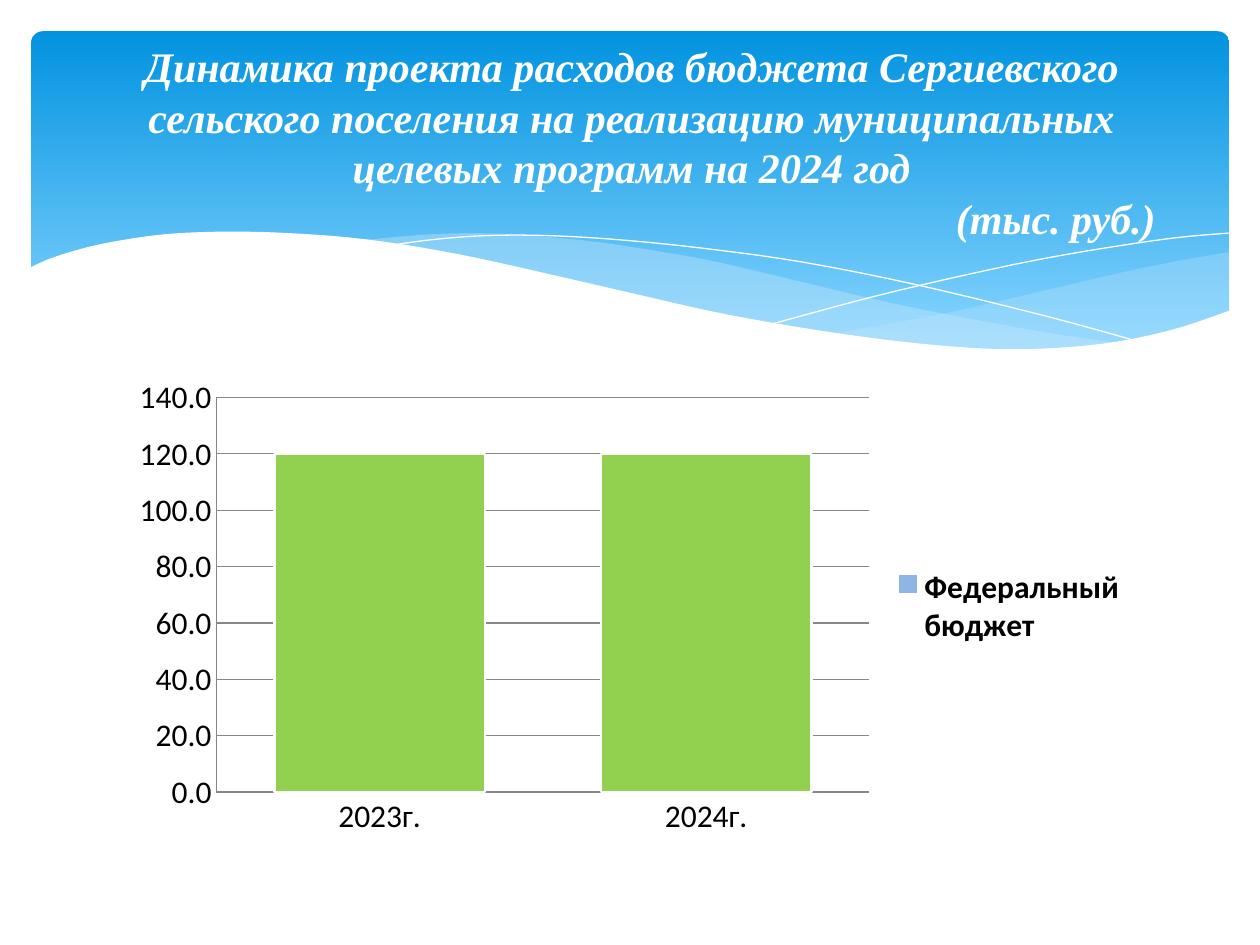
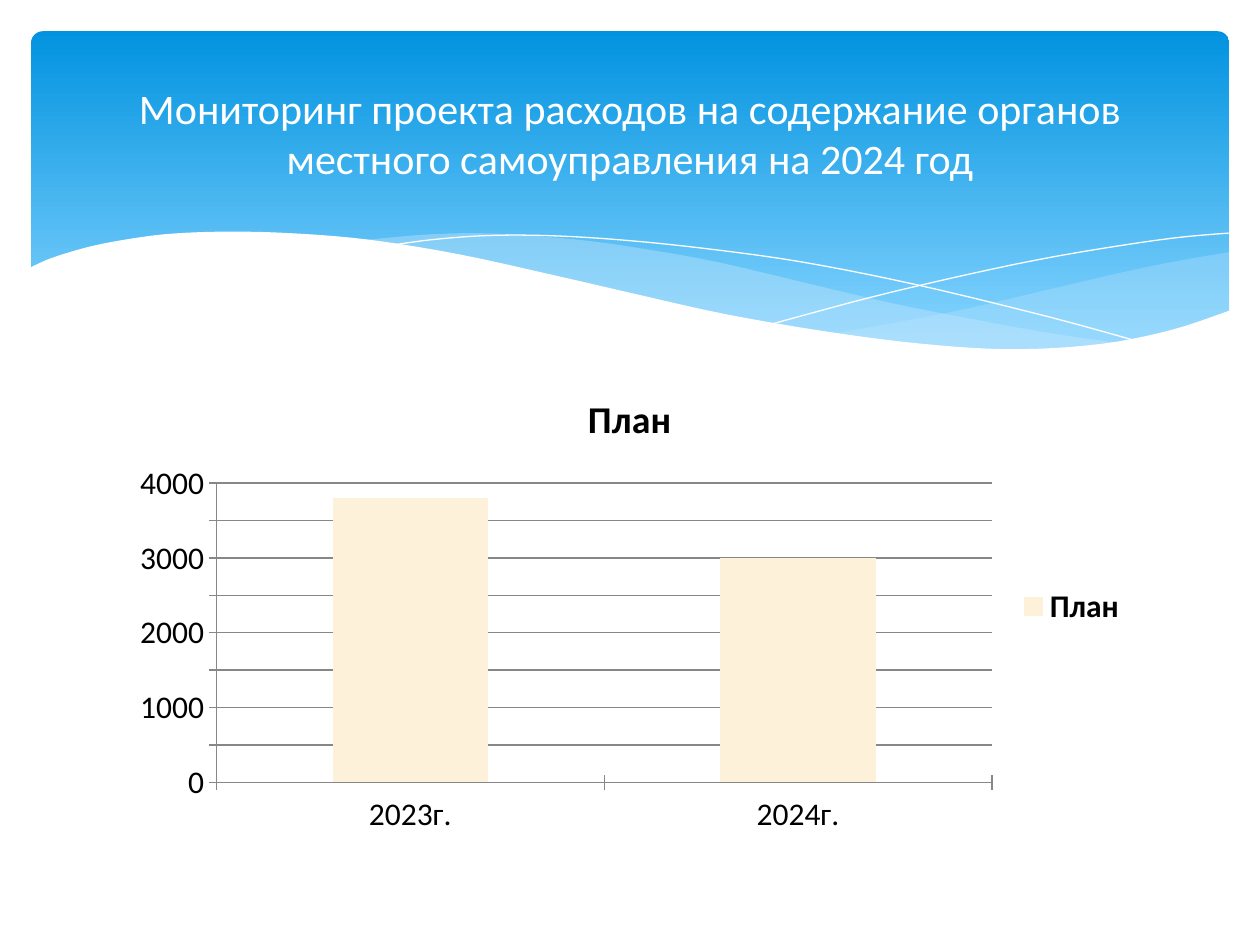
from dataclasses import dataclass

from lxml.etree import SubElement
from pptx import Presentation
from pptx.chart.data import CategoryChartData
from pptx.dml.color import RGBColor
from pptx.enum.chart import XL_CHART_TYPE, XL_LEGEND_POSITION, XL_TICK_MARK
from pptx.enum.shapes import MSO_SHAPE
from pptx.enum.text import MSO_ANCHOR, MSO_AUTO_SIZE, PP_ALIGN
from pptx.oxml import parse_xml
from pptx.oxml.ns import nsdecls, qn
from pptx.util import Cm, Pt


@dataclass(frozen=True)
class Theme:
    white: str = "FFFFFF"
    black: str = "000000"
    band_top: str = "0293E0"
    band_bottom: str = "83D3FE"
    veil: str = "C6E7FC"
    axis: str = "878787"
    green: str = "92D050"
    cyan: str = "00B0F0"
    soft_blue: str = "8FB5E5"
    cream: str = "FDF2D9"
    sans: str = "Calibri"
    serif: str = "Times New Roman"
    title_size: float = 24
    title_leading: float = 28.8
    chart_size: float = 18
    chart_title_size: float = 21.6


THEME = Theme()

# Content: titles are (text, alignment); charts hold (name, values, colour)
YEARS = ["2023г.", "2024г."]
SLIDES = [
    dict(
        title=[
            ("Динамика проекта расходов бюджета Сергиевского сельского поселения "
             "на реализацию муниципальных целевых программ на 2024 год", PP_ALIGN.CENTER),
            ("(тыс. руб.)", PP_ALIGN.RIGHT),
        ],
        title_box=(1.3, 0.91, 22.86, 3.89),
        title_format=dict(font=THEME.serif, bold=True, italic=True),
        chart=dict(
            kind=XL_CHART_TYPE.COLUMN_STACKED,
            series=[("Series 1", (120, 120), THEME.green),
                    ("Series 2", (0, 0), THEME.cyan),
                    ("Федеральный бюджет", (0, 0), THEME.soft_blue)],
            hidden_in_legend=[0, 1],
            gap=55, overlap=100, outline=THEME.white,
            top=140, step=20, number_format="#,##0.0",
            tick=XL_TICK_MARK.NONE,
            plot_area=(0.095, 0.06, 0.64, 0.83),
        ),
    ),
    dict(
        title=[("Мониторинг проекта расходов на содержание органов местного "
                "самоуправления на 2024 год", PP_ALIGN.CENTER)],
        title_box=(1.27, 0.94, 22.86, 3.48),
        title_format=dict(font=THEME.sans),
        chart=dict(
            kind=XL_CHART_TYPE.COLUMN_CLUSTERED,
            heading="План",
            series=[("План", (3800, 3000), THEME.cream)],
            gap=150, overlap=0,
            top=4000, step=500, number_format="General",
            tick=XL_TICK_MARK.CROSS,
            plot_area=(0.095, 0.24, 0.76, 0.63),
        ),
    ),
]
CHART_BOX = (2.41, 7.44, 20.57, 9.58)
BAND_BOX = (0.63, 0.63, 24.15, 6.86)
TITLE_INSET = 0.86

# Header waves, back to front: each outline is a chain of smooth curves in cm
WAVES = [
    dict(fill=THEME.veil, opacity=29, curves=[
        [(24.79, 5.08), (23.75, 5.26), (22.63, 5.49), (21.13, 5.84), (19.13, 6.3),
         (16.79, 6.73)],
        [(16.79, 6.73), (17.91, 6.88), (19.23, 7.01), (20.4, 7.06), (21.69, 7.01),
         (22.78, 6.86), (23.75, 6.65), (24.79, 6.27)]]),
    dict(fill=THEME.veil, opacity=40, curves=[
        [(22.68, 6.93), (21.26, 6.73), (19.69, 6.45), (17.93, 6.1), (15.98, 5.64),
         (14.45, 5.28), (13.06, 5.03), (11.81, 4.85), (10.67, 4.75), (9.65, 4.7),
         (8.74, 4.72), (7.95, 4.78), (7.26, 4.85)],
        [(7.26, 4.85), (8.69, 5.05), (10.26, 5.36), (11.4, 5.64), (13.46, 6.1),
         (15.27, 6.48), (16.89, 6.76), (18.34, 6.96), (19.94, 7.06), (21.29, 7.06),
         (22.68, 6.93)]]),
    dict(line=THEME.white, curves=[
        [(7.85, 4.95), (8.74, 4.83), (9.83, 4.75), (11, 4.75), (12.42, 4.83),
         (14.12, 5), (16.15, 5.28), (18.47, 5.74), (21.11, 6.38), (23.04, 6.91)]]),
    dict(line=THEME.white, curves=[
        [(15.57, 6.53), (17.65, 5.97), (19.71, 5.49), (21.23, 5.18), (22.73, 4.93),
         (23.83, 4.78), (24.77, 4.7)]]),
    dict(fill=THEME.white, curves=[
        [(24.82, 6.25), (23.62, 6.65), (22.22, 6.93), (20.55, 7.04), (18.9, 6.96),
         (16.97, 6.73), (14.71, 6.35), (12.78, 5.92), (11.35, 5.59), (9.27, 5.13),
         (7.42, 4.83), (5.84, 4.7), (4.5, 4.67), (3.35, 4.72), (2.41, 4.85), (1.7, 5),
         (1.02, 5.21), (0.58, 5.41)],
        [(0.58, 8.36), (24.82, 8.36)]]),
]


def rgb(color):
    return RGBColor.from_string(color)


def in_cm(box):
    return [Cm(length) for length in box]


def style_font(font, size=THEME.chart_size, color=THEME.black, name=THEME.sans,
               bold=False, italic=False):
    font.size, font.name, font.bold, font.italic = Pt(size), name, bold, italic
    font.color.rgb = rgb(color)


def write(paragraph, text, *, size=THEME.title_size, color=THEME.white,
          font=THEME.sans, bold=False, italic=False, align=PP_ALIGN.CENTER,
          leading=None):
    paragraph.alignment = align
    if leading:
        paragraph.line_spacing = Pt(leading)
    run = paragraph.add_run()
    run.text = text
    style_font(run.font, size, color, font, bold, italic)


def smooth(knots, steps=5):
    """Catmull-Rom curve through the knots."""
    padded = [knots[0], *knots, knots[-1]]
    curve = [knots[0]]
    for a, b, c, d in zip(padded, padded[1:], padded[2:], padded[3:]):
        for step in range(1, steps + 1):
            t = step / steps
            curve.append(tuple(
                (2 * q + (r - p) * t + (2 * p - 5 * q + 4 * r - s) * t ** 2
                 + (3 * q - p - 3 * r + s) * t ** 3) / 2
                for p, q, r, s in zip(a, b, c, d)))
    return curve


# Shared header
def draw_band(shapes):
    band = shapes.add_shape(MSO_SHAPE.ROUNDED_RECTANGLE, *in_cm(BAND_BOX))
    band.adjustments[0] = 0.034
    band.shadow.inherit = False
    band.line.fill.background()
    band.fill.gradient()
    band.fill.gradient_angle = 270
    stops = zip(band.fill.gradient_stops, (0, 0.9), (THEME.band_top, THEME.band_bottom))
    for stop, position, color in stops:
        stop.position = position
        stop.color.rgb = rgb(color)
    return band


def draw_wave(shapes, curves, fill=None, opacity=100, line=None):
    start, *rest = [tuple(in_cm(point)) for knots in curves for point in smooth(knots)]
    builder = shapes.build_freeform(*start)
    builder.add_line_segments(rest, close=fill is not None)
    wave = builder.convert_to_shape()
    wave.shadow.inherit = False
    if fill:
        wave.fill.solid()
        wave.fill.fore_color.rgb = rgb(fill)
        tint = wave.element.xpath("./p:spPr/a:solidFill/a:srgbClr")[0]
        SubElement(tint, qn("a:alpha")).set("val", str(opacity * 1000))
        wave.line.fill.background()
    else:
        wave.fill.background()
        wave.line.color.rgb = rgb(line)
        wave.line.width = Pt(0)
    return wave


def put_header_on_layout(layout, slide):
    """Draw the header on a slide, then move it behind the layout placeholders."""
    header = [draw_band(slide.shapes)]
    header += [draw_wave(slide.shapes, **wave) for wave in WAVES]
    for order, part in enumerate(header):
        part.element.xpath(".//p:cNvPr")[0].set("id", str(20 + order))
        layout.shapes.element.insert(2 + order, part.element)


# Slide parts
def fill_title(title, paragraphs, box, text_format):
    title.left, title.top, title.width, title.height = in_cm(box)
    frame = title.text_frame
    frame.word_wrap = True
    frame.auto_size = MSO_AUTO_SIZE.NONE
    frame.vertical_anchor = MSO_ANCHOR.MIDDLE
    frame.margin_left = frame.margin_right = Cm(TITLE_INSET)
    for index, (text, align) in enumerate(paragraphs):
        paragraph = frame.add_paragraph() if index else frame.paragraphs[0]
        write(paragraph, text, align=align, leading=THEME.title_leading, **text_format)


def set_plot_area(chart, fractions):
    plot_area = chart.element.xpath("c:chart/c:plotArea")[0]
    for automatic in plot_area.xpath("c:layout"):
        plot_area.remove(automatic)
    places = "".join(f'<c:{tag} val="{value}"/>' for tag, value in zip("xywh", fractions))
    plot_area.insert(0, parse_xml(
        f'<c:layout {nsdecls("c")}><c:manualLayout><c:layoutTarget val="inner"/>'
        f'<c:xMode val="edge"/><c:yMode val="edge"/>{places}'
        '</c:manualLayout></c:layout>'))


def add_legend(chart, hidden):
    chart.has_legend = True
    chart.legend.position = XL_LEGEND_POSITION.RIGHT
    chart.legend.include_in_layout = False
    style_font(chart.legend.font, bold=True)
    position = chart.element.xpath("c:chart/c:legend/c:legendPos")[0]
    for index in reversed(hidden):
        position.addnext(parse_xml(
            f'<c:legendEntry {nsdecls("c")}><c:idx val="{index}"/>'
            '<c:delete val="1"/></c:legendEntry>'))


def add_budget_chart(shapes, kind, series, gap, overlap, top, step, number_format,
                     tick, plot_area, heading=None, outline=None, hidden_in_legend=()):
    data = CategoryChartData()
    data.categories = YEARS
    for name, values, _ in series:
        data.add_series(name, values)
    chart = shapes.add_chart(kind, *in_cm(CHART_BOX), data).chart
    style_font(chart.font)
    chart.has_title = heading is not None
    if heading:
        write(chart.chart_title.text_frame.paragraphs[0], heading,
              size=THEME.chart_title_size, color=THEME.black, bold=True)

    plot = chart.plots[0]
    plot.gap_width, plot.overlap, plot.vary_by_categories = gap, overlap, False
    for columns, (_, _, color) in zip(plot.series, series):
        columns.format.fill.solid()
        columns.format.fill.fore_color.rgb = rgb(color)
        if outline:
            columns.format.line.color.rgb = rgb(outline)
            columns.format.line.width = Pt(1.5)

    amounts = chart.value_axis
    amounts.minimum_scale, amounts.maximum_scale, amounts.major_unit = 0, top, step
    amounts.tick_labels.number_format = number_format
    amounts.tick_labels.number_format_is_linked = False
    amounts.has_major_gridlines = True
    amounts.major_gridlines.format.line.color.rgb = rgb(THEME.axis)
    for axis in (amounts, chart.category_axis):
        axis.major_tick_mark = tick
        axis.minor_tick_mark = XL_TICK_MARK.NONE
        axis.format.line.color.rgb = rgb(THEME.axis)
    add_legend(chart, hidden_in_legend)
    set_plot_area(chart, plot_area)


def main():
    deck = Presentation()
    deck.slide_width, deck.slide_height = Cm(25.4), Cm(19.05)
    title_only = deck.slide_layouts[5]
    for index, content in enumerate(SLIDES):
        slide = deck.slides.add_slide(title_only)
        if index == 0:
            put_header_on_layout(title_only, slide)
        fill_title(slide.shapes.title, content["title"], content["title_box"],
                   content["title_format"])
        add_budget_chart(slide.shapes, **content["chart"])
    deck.save("out.pptx")


if __name__ == "__main__":
    main()
